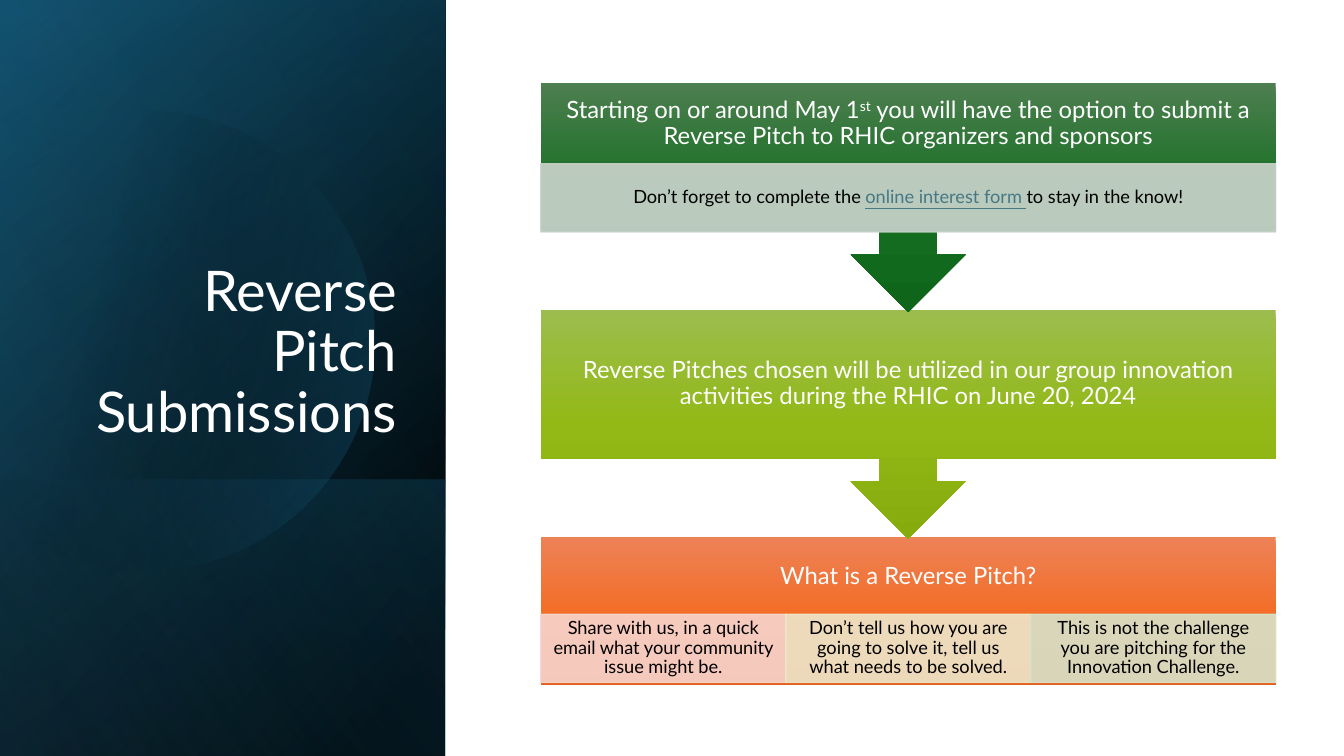
from math import acos, cos, sin
from pptx import Presentation
from pptx.dml.color import RGBColor
from pptx.enum.shapes import MSO_SHAPE
from pptx.enum.text import MSO_ANCHOR, MSO_AUTO_SIZE, PP_ALIGN
from pptx.oxml import parse_xml
from pptx.oxml.ns import nsdecls, qn
from pptx.util import Pt


class Theme:
    font = "Lato"
    title, head, detail = 40, 17, 13
    white, black, link = "FFFFFF", "000000", "467886"
    blue, deep_blue, sky = "156082", "104862", "46B1E1"
    green = ("4D7E50", "156F21", "0F661B")
    lime = ("9CBD4E", "92B916", "85AB0D")
    orange = ("ED8257", "F26E29", "E25F1A")
    sage, rose, sand, mint = "CCD4CD", "F7D5CE", "EEE7CB", "D8E2CA"


# Content: runs are (text, format) pairs
TITLE = "Reverse Pitch Submissions"
STEPS = [
    {"colors": Theme.green, "detail_top": 77,
     "head": [("Starting on or around May 1", {}), ("st", {"raised": True}),
              (" you will have the option to submit a Reverse Pitch to RHIC"
               " organizers and sponsors", {})],
     "details": [(Theme.sage, [
         ("Don’t forget to complete the ", {}),
         ("online interest form ", {"color": Theme.link, "underline": True}),
         ("to stay in the know!", {})])]},
    {"colors": Theme.lime, "detail_top": 141,
     "head": [("Reverse Pitches chosen will be utilized in our group innovation"
               " activities during the RHIC on June 20, 2024", {})],
     "details": []},
    {"colors": Theme.orange, "detail_top": 77,
     "head": [("What is a Reverse Pitch?", {})],
     "details": [
         (Theme.rose, [("Share with us, in a quick email what your community"
                        " issue might be.", {})]),
         (Theme.sand, [("Don’t tell us how you are going to solve it, tell us"
                        " what needs to be solved.", {})]),
         (Theme.mint, [("This is not the challenge you are pitching for the"
                        " Innovation Challenge.", {})])]},
]

# Layout in px, 96 to the inch
SLIDE_W, SLIDE_H = 1280, 720
PANEL_W = 424
FLOW_X, FLOW_Y, FLOW_W, PITCH = 515, 79, 700, 216
BOX_H, CALLOUT_H, DETAIL_H = 141, 218, 65
CIRCLE_X, CIRCLE_Y, CIRCLE_R = 138, 324, 219


def px(n):
    return round(n * 9525)


def write(tf, runs, size, color, align=PP_ALIGN.CENTER, anchor=MSO_ANCHOR.MIDDLE,
          insets=(10, 5, 10, 5)):
    tf.word_wrap = True
    tf.auto_size = MSO_AUTO_SIZE.NONE
    tf.vertical_anchor = anchor
    (tf.margin_left, tf.margin_top,
     tf.margin_right, tf.margin_bottom) = map(px, insets)
    p = tf.paragraphs[0]
    p.alignment, p.line_spacing = align, 0.9
    for text, fmt in runs:
        r = p.add_run()
        r.text = text
        r.font.name, r.font.size = Theme.font, Pt(size)
        r.font.color.rgb = RGBColor.from_string(fmt.get("color", color))
        if fmt.get("underline"):
            r.font.underline = True
        if fmt.get("raised"):
            r._r.get_or_add_rPr().set("baseline", "30000")


def gradient(sp, stops, angle):
    """Fill with (position %, colour, opacity %) stops and no outline."""
    gs = "".join(
        f'<a:gs pos="{pos * 1000}"><a:srgbClr val="{color}">'
        f'<a:alpha val="{opacity * 1000}"/></a:srgbClr></a:gs>'
        for pos, color, opacity in stops)
    sp.shadow.inherit = False
    sp.line.fill.background()
    sp.fill.solid()
    spPr = sp.element.spPr
    spPr.replace(spPr.find(qn("a:solidFill")), parse_xml(
        f'<a:gradFill {nsdecls("a")} rotWithShape="1"><a:gsLst>{gs}</a:gsLst>'
        f'<a:lin ang="{angle * 60000}" scaled="0"/></a:gradFill>'))


def add_shape(kind, x, y, w, h):
    return s.shapes.add_shape(kind, px(x), px(y), px(w), px(h))


def add_shade(top, stops, angle):
    """Panel layer from top to the slide's foot, turned a quarter and flipped."""
    w, h = SLIDE_H - top, PANEL_W
    sp = add_shape(MSO_SHAPE.RECTANGLE, (h - w) / 2, top + (w - h) / 2, w, h)
    sp.rotation = 90
    sp.element.spPr.xfrm.set("flipH", "1")
    gradient(sp, stops, angle)


def add_circle():
    """Circle cut off at the left edge of the slide."""
    limit, steps = acos(-CIRCLE_X / CIRCLE_R), 120
    angles = [limit * (2 * i / steps - 1) for i in range(steps + 1)]
    points = [(px(CIRCLE_X + CIRCLE_R * cos(a)), px(CIRCLE_Y + CIRCLE_R * sin(a)))
              for a in angles]
    fb = s.shapes.build_freeform(*points[0])
    fb.add_line_segments(points[1:], close=True)
    gradient(fb.convert_to_shape(), [(29, Theme.black, 0), (100, Theme.blue, 43)], 14)


def add_detail(x, y, w, color, runs):
    sp = add_shape(MSO_SHAPE.RECTANGLE, x, y, w, DETAIL_H)
    sp.shadow.inherit = False
    sp.line.width = Pt(1)
    for fill in (sp.fill, sp.line.fill):
        fill.solid()
        fill.fore_color.rgb = RGBColor.from_string(color)
    for clr in sp.element.spPr.iter(qn("a:srgbClr")):
        clr.append(parse_xml(f'<a:alpha {nsdecls("a")} val="90000"/>'))
    write(sp.text_frame, runs, Theme.detail, Theme.black, insets=(10, 2, 10, 2))


def add_step(i, step):
    y, last = FLOW_Y + i * PITCH, i == len(STEPS) - 1
    kind = MSO_SHAPE.RECTANGLE if last else MSO_SHAPE.DOWN_ARROW_CALLOUT
    sp = add_shape(kind, FLOW_X, y, FLOW_W, BOX_H if last else CALLOUT_H)
    gradient(sp, [(pos, c, 100) for pos, c in zip((0, 50, 100), step["colors"])], 90)
    write(sp.text_frame, step["head"], Theme.head, Theme.white,
          insets=(12, 12, 12, 12 + BOX_H - step["detail_top"]))
    top = y + (BOX_H - DETAIL_H - 2 if last else step["detail_top"])
    for j, (color, runs) in enumerate(step["details"]):
        w = FLOW_W / len(step["details"])
        add_detail(FLOW_X + j * w, top, w, color, runs)


prs = Presentation()
prs.slide_width, prs.slide_height = px(SLIDE_W), px(SLIDE_H)
s = prs.slides.add_slide(prs.slide_layouts[5])

# Left panel
add_shade(0, [(8, Theme.black, 100), (100, Theme.deep_blue, 100)], 50)
add_shade(0, [(0, Theme.black, 0), (99, Theme.blue, 46)], 30)
add_shade(457, [(2, Theme.blue, 29), (100, Theme.black, 30)], 130)
add_circle()
add_shade(0, [(0, Theme.black, 0), (99, Theme.sky, 11)], 120)

# Title, raised above the panel
title = s.shapes.title
title.left, title.top, title.width, title.height = map(px, (61, 177, 327, 251))
write(title.text_frame, [(TITLE, {})], Theme.title, Theme.white,
      align=PP_ALIGN.RIGHT, anchor=MSO_ANCHOR.BOTTOM)
s.shapes.element.append(title.element)

# Flow, last step first so that each arrow tip lies on the next box
for i, step in reversed(list(enumerate(STEPS))):
    add_step(i, step)

prs.save("out.pptx")
